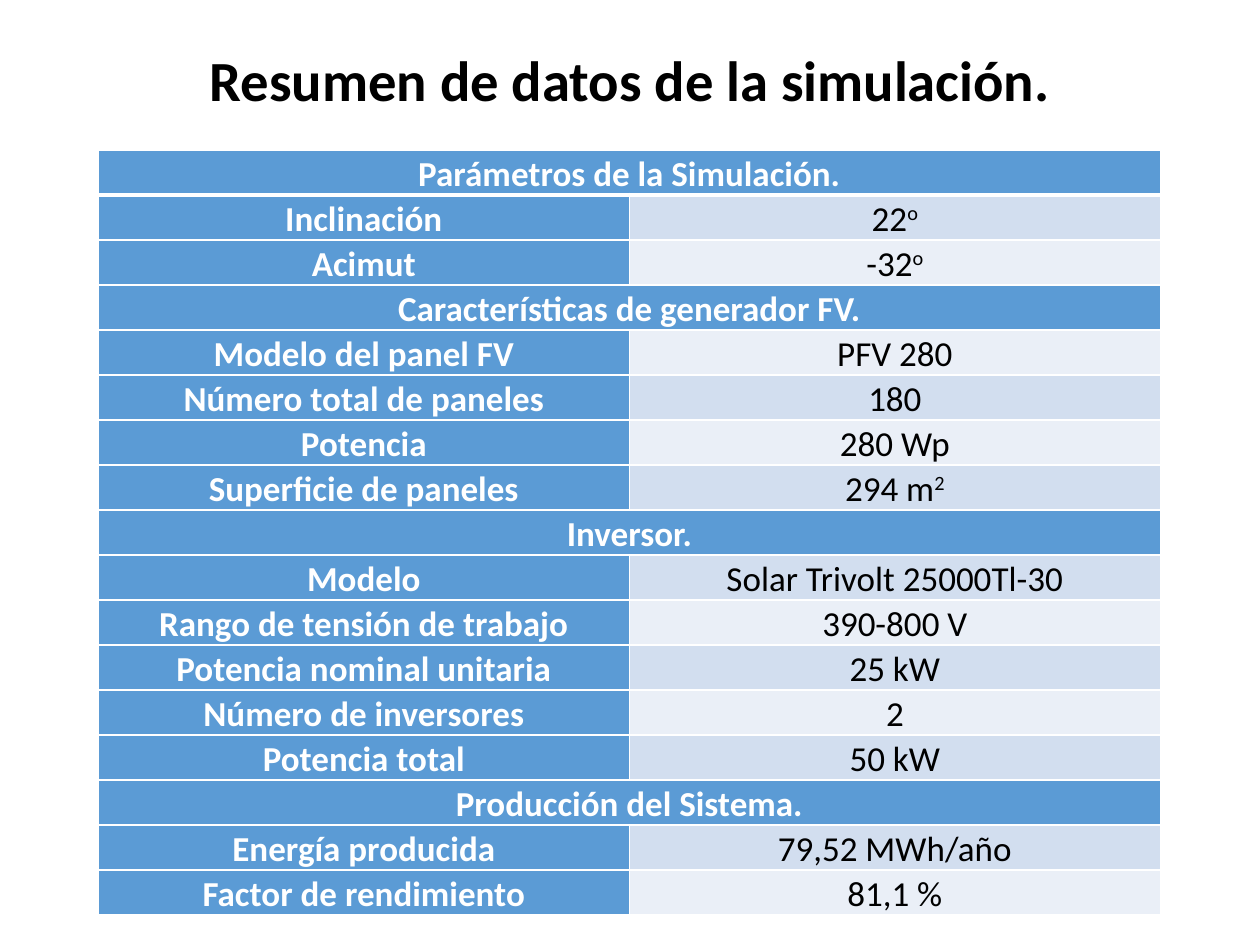
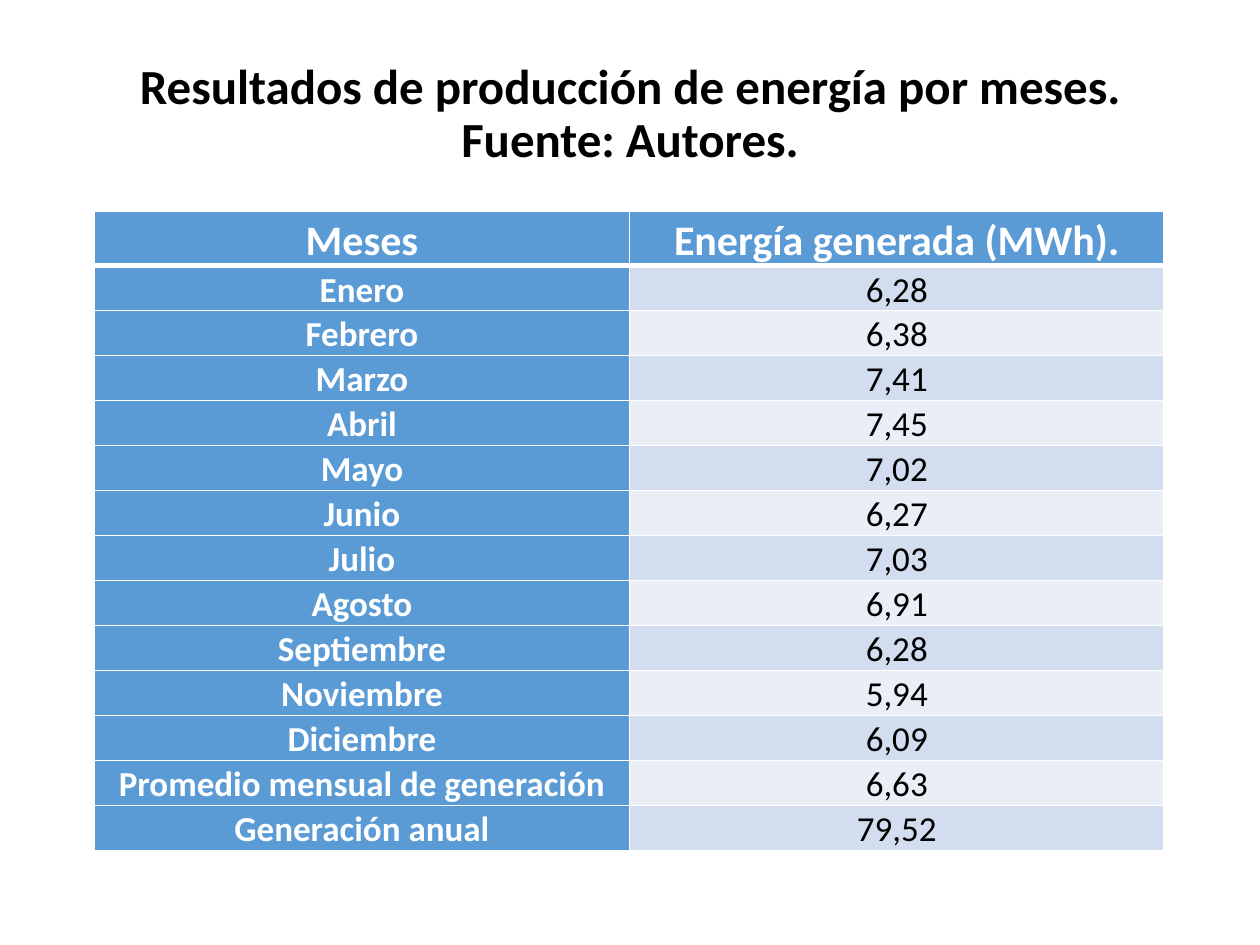
from lxml import etree
from pptx import Presentation
from pptx.dml.color import RGBColor
from pptx.enum.text import MSO_ANCHOR, PP_ALIGN
from pptx.oxml.ns import qn
from pptx.util import Inches, Pt

# A row with one text is a section that spans both columns.
# Text after ^ is superscript.
SYSTEM = [
    ("Parámetros de la Simulación.",),
    ("Inclinación", "22^o"),
    ("Acimut", "-32^o"),
    ("Características de generador FV.",),
    ("Modelo del panel FV", "PFV 280"),
    ("Número total de paneles", "180"),
    ("Potencia", "280 Wp"),
    ("Superficie de paneles", "294 m^2"),
    ("Inversor.",),
    ("Modelo", "Solar Trivolt 25000Tl-30"),
    ("Rango de tensión de trabajo", "390-800 V"),
    ("Potencia nominal unitaria", "25 kW"),
    ("Número de inversores", "2"),
    ("Potencia total", "50 kW"),
    ("Producción del Sistema.",),
    ("Energía producida", "79,52 MWh/año"),
    ("Factor de rendimiento", "81,1 %"),
]
MONTHS = [
    ("Meses", "Energía generada (MWh)."),
    ("Enero", "6,28"),
    ("Febrero", "6,38"),
    ("Marzo", "7,41"),
    ("Abril", "7,45"),
    ("Mayo", "7,02"),
    ("Junio", "6,27"),
    ("Julio", "7,03"),
    ("Agosto", "6,91"),
    ("Septiembre", "6,28"),
    ("Noviembre", "5,94"),
    ("Diciembre", "6,09"),
    ("Promedio mensual de generación", "6,63"),
    ("Generación anual", "79,52"),
]
SLIDES = [
    {"title": "Resumen de datos de la simulación.", "size": 32.4, "tall": 0.52,
     "rows": SYSTEM, "head": 20, "at": (0.78, 1.19, 8.43, 5.79)},
    {"title": "Resultados de producción de energía por meses. Fuente: Autores.",
     "size": 28, "tall": 1.02,
     "rows": MONTHS, "head": 24, "at": (0.75, 1.68, 8.49, 4.91)},
]

FONT = "Calibri"
BODY = 20
BLACK = RGBColor(0x00, 0x00, 0x00)
WHITE = RGBColor(0xFF, 0xFF, 0xFF)
BLUE = RGBColor(0x5B, 0x9B, 0xD5)
BANDS = (RGBColor(0xEA, 0xEF, 0xF7), RGBColor(0xD2, 0xDE, 0xEF))
CENTER = PP_ALIGN.CENTER
MIDDLE = MSO_ANCHOR.MIDDLE
CELL = {"margin_left": Inches(0.07), "margin_right": Inches(0.07),
        "margin_top": 0, "margin_bottom": 0, "vertical_anchor": MIDDLE}


def assign(item, values):
    for name, value in values.items():
        setattr(item, name, value)


def write(frame, text, size, color, bold, spacing):
    para = frame.paragraphs[0]
    assign(para, {"alignment": CENTER, "line_spacing": spacing})
    for raised, part in enumerate(text.split("^")):
        run = para.add_run()
        run.text = part
        assign(run.font, {"name": FONT, "size": Pt(size), "bold": bold})
        run.font.color.rgb = color
        if raised:
            run._r.get_or_add_rPr().set("baseline", "30000")


def border(cell, top, bottom):
    """Draw white edges; widths are in points."""
    props = cell._tc.get_or_add_tcPr()
    for side, width in (("L", 1), ("R", 1), ("T", top), ("B", bottom)):
        line = etree.SubElement(props, qn(f"a:ln{side}"), w=str(Pt(width)))
        fill = etree.SubElement(line, qn("a:solidFill"))
        etree.SubElement(fill, qn("a:srgbClr"), val=str(WHITE))


def add_title(slide, text, size, tall):
    box = slide.shapes.add_textbox(
        Inches(0.69), Inches(0.4), Inches(8.62), Inches(tall))
    assign(box.text_frame, {"word_wrap": True, "vertical_anchor": MIDDLE})
    write(box.text_frame, text, size, BLACK, True, 0.9)


def add_grid(slide, rows, head, at):
    place = [Inches(value) for value in at]
    grid = slide.shapes.add_table(len(rows), 2, *place).table
    grid.first_col = True
    for r, row in enumerate(rows):
        for c in range(2):
            cell = grid.cell(r, c)
            label = c == 0 or r == 0 or len(row) == 1
            assign(cell, CELL)
            border(cell, 3 if r == 1 else 1, 3 if r == 0 else 1)
            cell.fill.solid()
            cell.fill.fore_color.rgb = BLUE if label else BANDS[r % 2]
            if c < len(row):
                write(cell.text_frame, row[c], BODY if r else head,
                      WHITE if label else BLACK, label, 1.07)
        if len(row) == 1:
            grid.cell(r, 0).merge(grid.cell(r, 1))


def main():
    deck = Presentation()
    assign(deck, {"slide_width": Inches(10), "slide_height": Inches(7.5)})
    for data in SLIDES:
        slide = deck.slides.add_slide(deck.slide_layouts[6])
        add_title(slide, data["title"], data["size"], data["tall"])
        add_grid(slide, data["rows"], data["head"], data["at"])
    deck.save("out.pptx")


if __name__ == "__main__":
    main()
